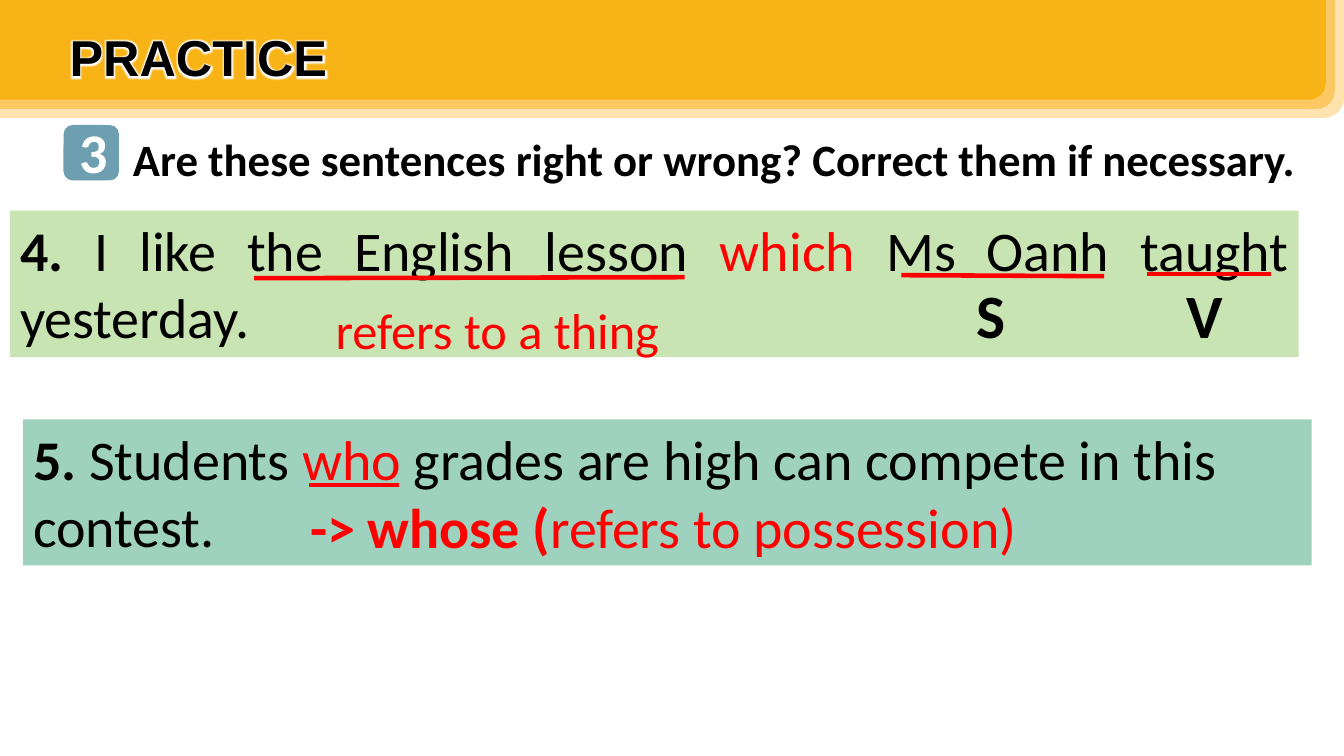
"""Build the PRACTICE slide about relative pronouns."""
from lxml import etree
from pptx import Presentation
from pptx.dml.color import RGBColor
from pptx.enum.shapes import MSO_CONNECTOR, MSO_SHAPE
from pptx.enum.text import MSO_ANCHOR, MSO_AUTO_SIZE, PP_ALIGN
from pptx.oxml.ns import qn
from pptx.util import Inches, Pt

LEFT, CENTER, JUSTIFY = PP_ALIGN.LEFT, PP_ALIGN.CENTER, PP_ALIGN.JUSTIFY
TOP = MSO_ANCHOR.TOP
NO_AUTOFIT = MSO_AUTO_SIZE.NONE
STRAIGHT = MSO_CONNECTOR.STRAIGHT
ROUND_ONE = MSO_SHAPE.ROUND_1_RECTANGLE
ROUND_ALL = MSO_SHAPE.ROUNDED_RECTANGLE
TITLE_ONLY = 5

COLORS = {
    "black": "000000",
    "white": "FFFFFF",
    "red": "FF0000",
    "banner_outer": "FEE3AF",
    "banner_middle": "FBC864",
    "banner_inner": "F8B417",
    "badge": "6D9FB1",
    "green": "C8E4B2",
    "teal": "9ED2BE",
}


def color(name):
    """Return the named colour."""
    return RGBColor.from_string(COLORS[name])


def add_block(shapes, kind, place, fill):
    """Add a plain filled shape without outline or shadow."""
    block = shapes.add_shape(kind, *map(Inches, place))
    block.shadow.inherit = False
    block.fill.solid()
    block.fill.fore_color.rgb = color(fill)
    block.line.fill.background()
    return block


def add_banner(slide):
    """Add the three nested bands of the header, rounded at lower right."""
    group = slide.shapes.add_group_shape()
    for step, fill in enumerate(("banner_outer", "banner_middle", "banner_inner")):
        inset = 0.09 * step
        place = (0, -0.01, 13.33 - inset, 1.18 - inset)
        band = add_block(group.shapes, ROUND_ONE, place, fill)
        band.element.spPr.find(qn("a:xfrm")).set("flipV", "1")


def write_runs(box, runs, size, align=LEFT, font="Calibri"):
    """Write (text, colour, bold) runs into the first paragraph of a box."""
    frame = box.text_frame
    frame.word_wrap = True
    frame.auto_size = NO_AUTOFIT
    frame.vertical_anchor = TOP
    para = frame.paragraphs[0]
    para.alignment = align
    for text, ink, bold in runs:
        span = para.add_run()
        span.text = text
        span.font.name = font
        span.font.size = Pt(size)
        span.font.bold = bold
        span.font.color.rgb = color(ink)


def add_text(slide, place, runs, size, align=LEFT, fill=None):
    """Add a text box, filled when a fill is given."""
    box = slide.shapes.add_textbox(*map(Inches, place))
    if fill:
        box.fill.solid()
        box.fill.fore_color.rgb = color(fill)
    write_runs(box, runs, size, align)


def add_glow(title):
    """Give the title text a white halo."""
    effects = etree.Element(qn("a:effectLst"))
    glow = etree.SubElement(effects, qn("a:glow"), rad="63500")
    etree.SubElement(glow, qn("a:srgbClr"), val=COLORS["white"])
    text_fill = next(title.element.iter(qn("a:solidFill")))
    text_fill.addnext(effects)


def add_title(slide, text):
    """Move the title placeholder onto the banner and format it."""
    title = slide.shapes.title
    title.left, title.top, title.width, title.height = map(
        Inches, (0.59, 0.21, 6.67, 0.71))
    write_runs(title, [(text, "black", True)], 36, font="Arial")
    add_glow(title)
    slide.shapes.element.append(title.element)


def add_underline(slide, start, end, width=3.25):
    """Add a red line between two points."""
    line = slide.shapes.add_connector(STRAIGHT, *map(Inches, start + end))
    line.line.color.rgb = color("red")
    line.line.width = Pt(width)
    etree.SubElement(line.element.spPr, qn("a:effectLst"))


def main():
    """Build and save the deck."""
    deck = Presentation()
    deck.slide_width, deck.slide_height = Inches(13.33), Inches(7.5)
    slide = deck.slides.add_slide(deck.slide_layouts[TITLE_ONLY])

    add_banner(slide)
    add_title(slide, "PRACTICE")
    add_text(slide, (1.22, 1.26, 11.91, 0.64), [
        ("Are these sentences right or wrong? Correct them if necessary.",
         "black", True)], 32, JUSTIFY)
    add_block(slide.shapes, ROUND_ALL, (0.63, 1.24, 0.55, 0.55), "badge")
    add_text(slide, (0.69, 1.12, 0.43, 0.77), [("3", "white", True)], 40, CENTER)

    add_text(slide, (0.1, 2.09, 12.78, 1.45), [
        ("4.", "black", True),
        (" I like the English lesson ", "black", False),
        ("which ", "red", False),
        ("Ms Oanh taught yesterday.", "black", False)], 40, JUSTIFY, "green")
    add_text(slide, (0.23, 4.16, 12.78, 1.45), [
        ("5.", "black", True),
        (" Students ", "black", False),
        ("who ", "red", False),
        ("grades are high can compete in this contest.", "black", False)],
        40, fill="teal")

    add_text(slide, (2.98, 4.84, 7.4, 0.78), [
        ("-> whose (", "red", True),
        ("refers to possession)", "red", False)], 40)
    add_text(slide, (3.23, 2.92, 3.68, 0.71),
             [("refers to a thing", "red", False)], 36)
    for letter, left in (("S", 9.59), ("V", 11.67)):
        add_text(slide, (left, 2.7, 0.7, 0.84), [(letter, "black", True)], 44)

    add_underline(slide, (3.06, 4.81), (3.96, 4.81), 3)
    add_underline(slide, (2.52, 2.76), (6.79, 2.75))
    add_underline(slide, (8.94, 2.73), (10.95, 2.74))
    add_underline(slide, (11.38, 2.72), (12.61, 2.72))
    deck.save("out.pptx")


if __name__ == "__main__":
    main()
